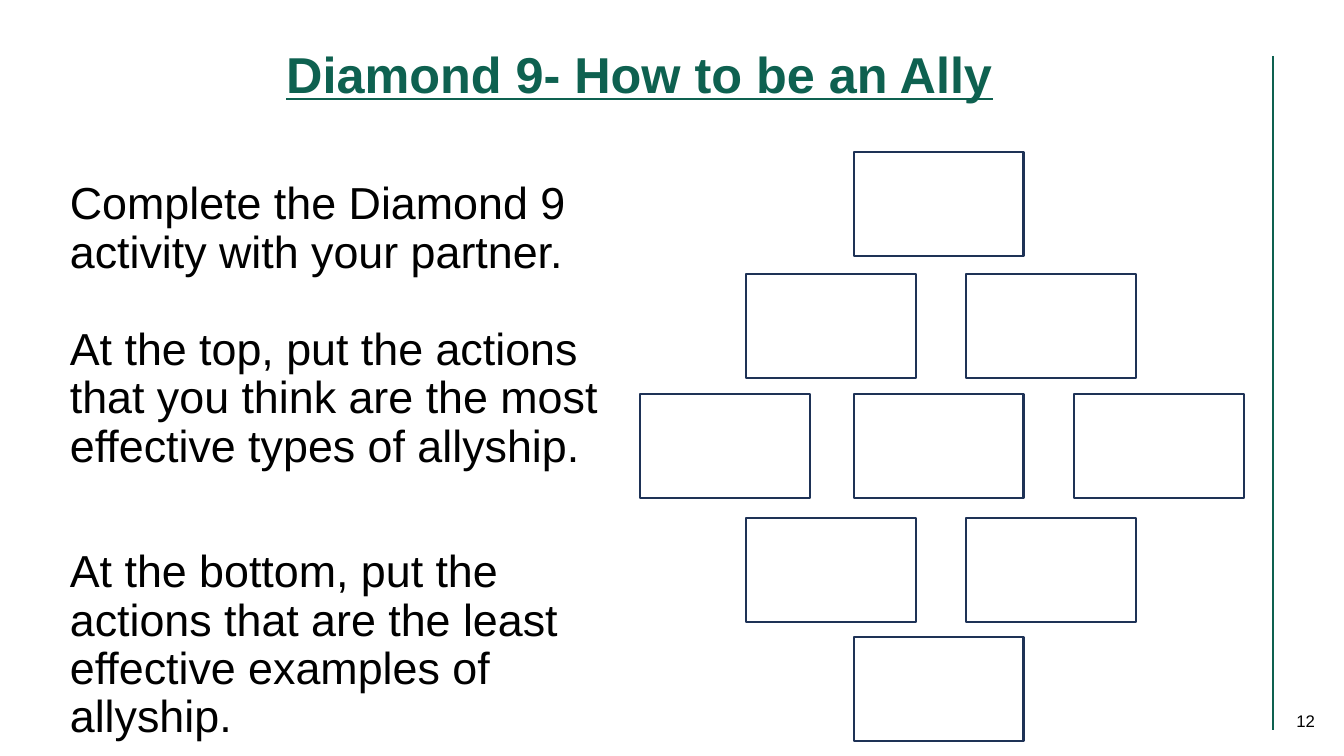
import pptx
import pptx.dml.color
import pptx.enum.shapes
import pptx.enum.text
import pptx.oxml.ns
import pptx.util
from lxml import etree

RGBColor = pptx.dml.color.RGBColor
Align = pptx.enum.text.PP_ALIGN
Anchor = pptx.enum.text.MSO_ANCHOR
AutoSize = pptx.enum.text.MSO_AUTO_SIZE
Pt = pptx.util.Pt

GREEN = RGBColor(0x0E, 0x61, 0x50)
NAVY = RGBColor(0x1E, 0x32, 0x56)
BLACK = RGBColor(0, 0, 0)
FONT = "Arial"
PX_PER_INCH = 100.8

INSTRUCTIONS = [
    ("Complete the Diamond 9 activity with your partner.", 0),
    ("At the top, put the actions that you think are the most effective types of allyship.", 35),
    ("At the bottom, put the actions that are the least effective examples of allyship.", 55),
]

# Card positions within the diamond: five half-step columns and five rows
CARD_SIZE = (170, 104)
COLUMN_LEFTS = [0, 106, 214, 326, 434]
ROW_TOPS = [0, 122, 242, 366, 485]
ROW_COLUMNS = [[2], [1, 3], [0, 2, 4], [1, 3], [2]]


def px(length):
    return pptx.util.Inches(length / PX_PER_INCH)


def add_text_frame(slide, box, anchor=Anchor.TOP):
    frame = slide.shapes.add_textbox(*map(px, box)).text_frame
    frame.word_wrap = True
    frame.vertical_anchor = anchor
    return frame


def style_paragraph(paragraph, size, color, alignment=Align.LEFT):
    paragraph.alignment = alignment
    paragraph.font.name = FONT
    paragraph.font.size = Pt(size)
    paragraph.font.color.rgb = color


def add_side_rule(slide, left, top, height):
    rule = slide.shapes.add_connector(
        pptx.enum.shapes.MSO_CONNECTOR.STRAIGHT,
        px(left), px(top), px(left), px(top + height))
    rule.line.color.rgb = GREEN
    rule.line.width = Pt(1.75)
    etree.SubElement(rule._element.spPr, pptx.oxml.ns.qn("a:effectLst"))


def add_title(slide, box):
    frame = add_text_frame(slide, box)
    frame.auto_size = AutoSize.SHAPE_TO_FIT_TEXT
    paragraph = frame.paragraphs[0]
    paragraph.text = "Diamond 9- How to be an Ally"
    paragraph.line_spacing = 0.9
    style_paragraph(paragraph, 36, GREEN, Align.CENTER)
    paragraph.font.bold = True
    paragraph.font.underline = True


def add_instructions(slide, box):
    frame = add_text_frame(slide, box)
    frame.auto_size = AutoSize.SHAPE_TO_FIT_TEXT
    for index, (text, space_before) in enumerate(INSTRUCTIONS):
        paragraph = frame.add_paragraph() if index else frame.paragraphs[0]
        paragraph.text = text
        paragraph.line_spacing = 0.9
        paragraph.space_before = Pt(space_before)
        style_paragraph(paragraph, 32, BLACK)


def add_page_number(slide, box):
    paragraph = add_text_frame(slide, box, Anchor.MIDDLE).paragraphs[0]
    paragraph.text = "12"
    style_paragraph(paragraph, 12, BLACK, Align.RIGHT)


def add_diamond(slide, left, top):
    """Draw the nine empty ranking cards."""
    for row_top, columns in zip(ROW_TOPS, ROW_COLUMNS):
        for column in columns:
            box = (left + COLUMN_LEFTS[column], top + row_top, *CARD_SIZE)
            card = slide.shapes.add_shape(
                pptx.enum.shapes.MSO_SHAPE.RECTANGLE, *map(px, box))
            card.shadow.inherit = False
            card.fill.background()
            card.line.color.rgb = NAVY
            card.line.width = Pt(2)


def main():
    presentation = pptx.Presentation()
    presentation.slide_width = px(1344)
    presentation.slide_height = px(756)
    slide = presentation.slides.add_slide(presentation.slide_layouts[6])
    add_side_rule(slide, 1273, 56, 674)
    add_title(slide, (60, 45, 1159, 66))
    add_instructions(slide, (60, 176, 551, 576))
    add_page_number(slide, (1023, 701, 302, 40))
    add_diamond(slide, 640, 152)
    presentation.save("out.pptx")


if __name__ == "__main__":
    main()
